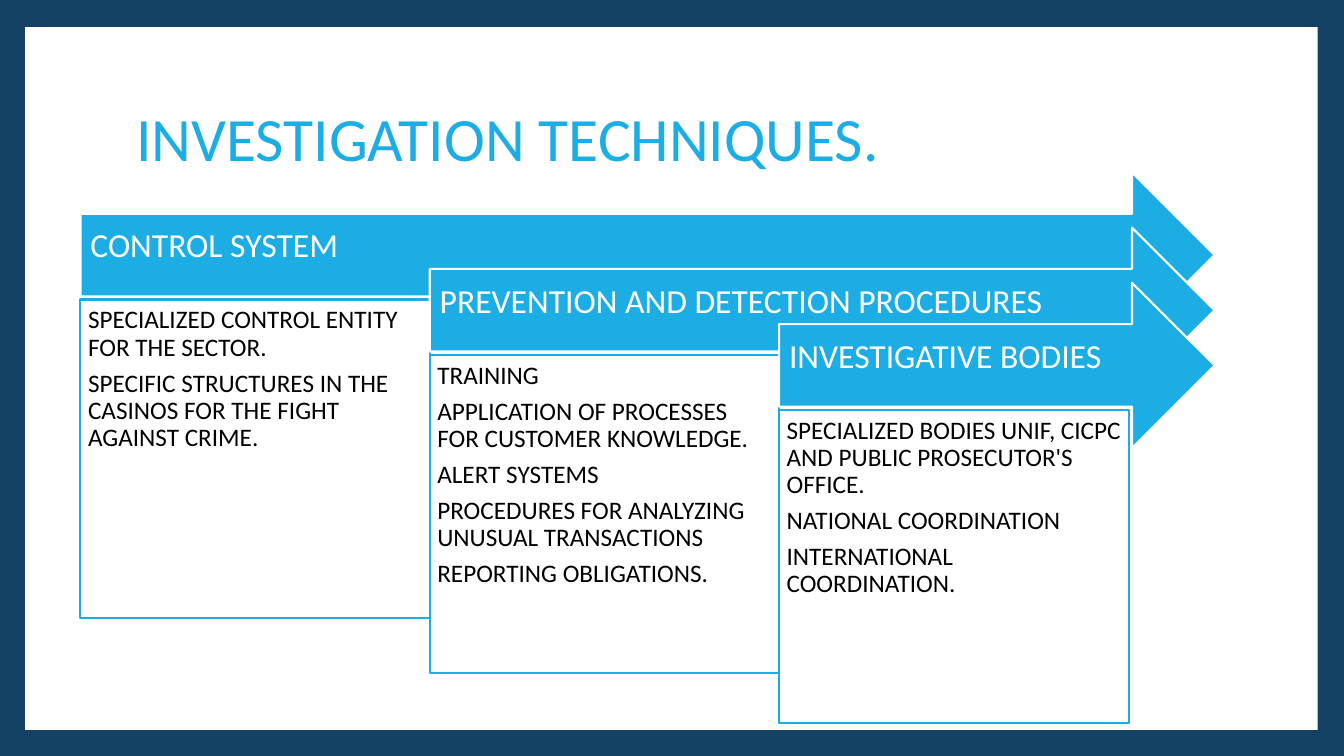
from pptx import Presentation
from pptx.dml.color import RGBColor
from pptx.enum import shapes, text
from pptx.util import Pt

NAVY, BLUE, WHITE, BLACK = "134163", "1CADE4", "FFFFFF", "000000"
TITLE = "INVESTIGATION TECHNIQUES."
STAGES = [
    ("CONTROL SYSTEM", 227.5, [
        "SPECIALIZED CONTROL ENTITY FOR THE SECTOR.",
        "SPECIFIC STRUCTURES IN THE CASINOS FOR THE FIGHT AGAINST CRIME.",
    ]),
    ("PREVENTION AND DETECTION PROCEDURES", 227.5, [
        "TRAINING",
        "APPLICATION OF PROCESSES FOR CUSTOMER KNOWLEDGE.",
        "ALERT SYSTEMS",
        "PROCEDURES FOR ANALYZING UNUSUAL TRANSACTIONS",
        "REPORTING OBLIGATIONS.",
    ]),
    ("INVESTIGATIVE BODIES", 224, [
        "SPECIALIZED BODIES UNIF, CICPC AND PUBLIC PROSECUTOR'S OFFICE.",
        "NATIONAL COORDINATION",
        "INTERNATIONAL COORDINATION.",
    ]),
]
LEFT, RIGHT, TOP = 57.5, 867.6, 123.2
COLUMN_STEP, ROW_STEP = 249.5, 39.4
ARROW_HEIGHT, BOX_OFFSET, BOX_WIDTH = 118, 90.8, 249.8


def color(value):
    return RGBColor.from_string(value)


def write(shape, lines, size, ink, anchor, insets, space_after=0):
    frame = shape.text_frame
    frame.word_wrap = True
    frame.auto_size = text.MSO_AUTO_SIZE.NONE
    frame.vertical_anchor = anchor
    frame.margin_left, frame.margin_top, frame.margin_right, frame.margin_bottom = map(Pt, insets)
    for index, line in enumerate(lines):
        paragraph = frame.add_paragraph() if index else frame.paragraphs[0]
        paragraph.alignment = text.PP_ALIGN.LEFT
        paragraph.line_spacing = 0.9
        paragraph.space_before = Pt(0)
        paragraph.space_after = Pt(space_after)
        run = paragraph.add_run()
        run.text = line
        run.font.name = "Calibri"
        run.font.size = Pt(size)
        run.font.color.rgb = color(ink)


def add_shape(slide, kind, bounds, fill, line=None):
    shape = slide.shapes.add_shape(kind, *map(Pt, bounds))
    shape.shadow.inherit = False
    shape.fill.solid()
    shape.fill.fore_color.rgb = color(fill)
    if line:
        shape.line.color.rgb = color(line)
        shape.line.width = Pt(1.5)
    else:
        shape.line.fill.background()
    return shape


def add_stage(slide, index, heading, box_height, points):
    left = LEFT + index * COLUMN_STEP
    top = TOP + index * ROW_STEP
    arrow = add_shape(slide, shapes.MSO_SHAPE.RIGHT_ARROW,
                      (left, top, RIGHT - left, ARROW_HEIGHT), BLUE, WHITE)
    write(arrow, [heading], 24, WHITE, text.MSO_ANCHOR.MIDDLE, (7.2, 7.2, 20, 18.7))
    box = add_shape(slide, shapes.MSO_SHAPE.RECTANGLE,
                    (left, top + BOX_OFFSET, BOX_WIDTH, box_height), WHITE, BLUE)
    write(box, points, 18, BLACK, text.MSO_ANCHOR.TOP, (5.4, 5.4, 5.4, 5.4), space_after=6.3)


def main():
    presentation = Presentation()
    presentation.slide_width, presentation.slide_height = Pt(960), Pt(540)
    slide = presentation.slides.add_slide(presentation.slide_layouts[5])
    slide.background.fill.solid()
    slide.background.fill.fore_color.rgb = color(NAVY)

    panel = add_shape(slide, shapes.MSO_SHAPE.RECTANGLE, (18, 19.3, 923.3, 502), WHITE)
    title = slide.shapes.title
    panel._element.addnext(title._element)
    title.left, title.top, title.width, title.height = map(Pt, (90, 48, 777.6, 106.5))
    write(title, [TITLE], 44, BLUE, text.MSO_ANCHOR.MIDDLE, (7.2, 3.6, 7.2, 3.6))

    for index, stage in enumerate(STAGES):
        add_stage(slide, index, *stage)
    presentation.save("out.pptx")


if __name__ == "__main__":
    main()
